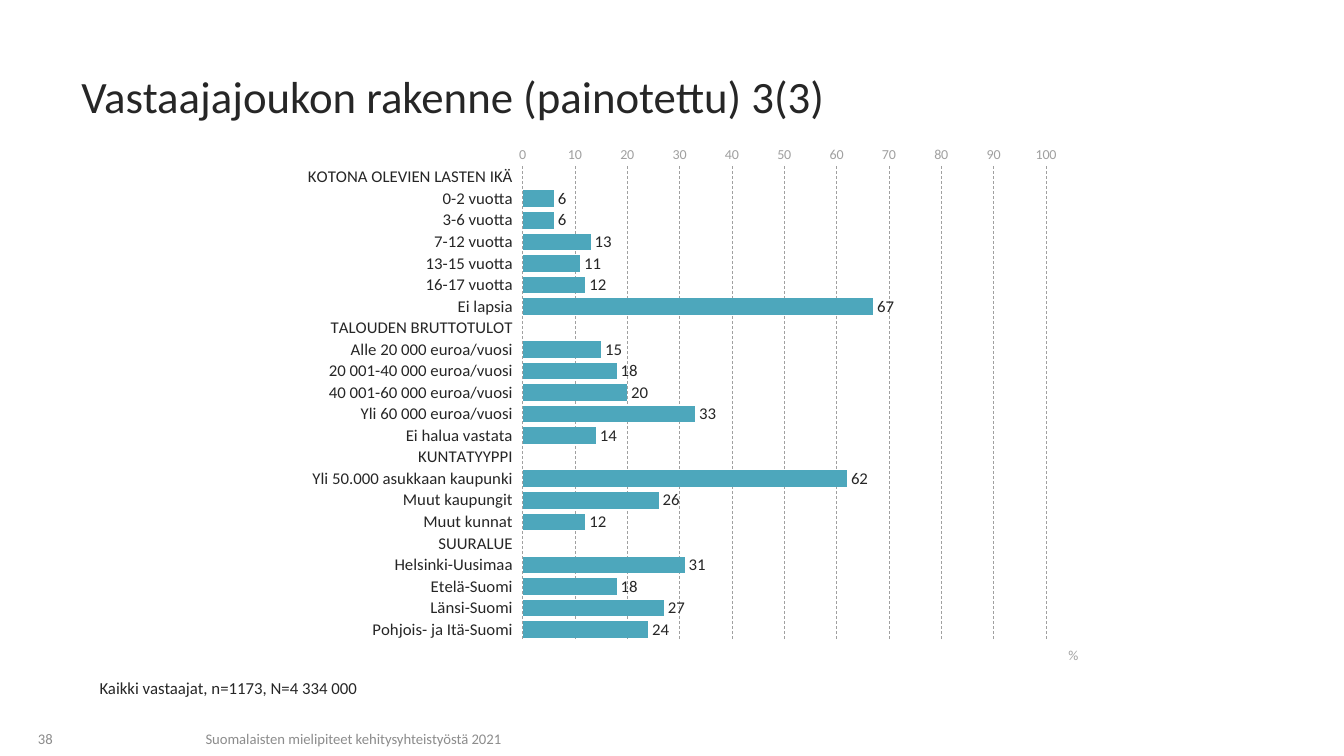
from lxml.etree import SubElement
from pptx import Presentation
from pptx.chart.data import CategoryChartData
from pptx.dml.color import RGBColor
from pptx.enum.chart import (XL_AXIS_CROSSES, XL_CHART_TYPE, XL_LABEL_POSITION,
                             XL_TICK_LABEL_POSITION, XL_TICK_MARK)
from pptx.enum.dml import MSO_LINE
from pptx.enum.text import MSO_ANCHOR, PP_ALIGN
from pptx.oxml.ns import qn
from pptx.util import Cm, Pt

FONT = "Calibri"
COLORS = {"text": "262626", "footer": "8C8C8C", "axis": "A0A0A0", "bar": "4DA7BC"}

RESPONDENTS = {
    "KOTONA OLEVIEN LASTEN IKÄ": {
        "0-2 vuotta": 6, "3-6 vuotta": 6, "7-12 vuotta": 13,
        "13-15 vuotta": 11, "16-17 vuotta": 12, "Ei lapsia": 67},
    "TALOUDEN BRUTTOTULOT": {
        "Alle 20 000 euroa/vuosi": 15, "20 001-40 000 euroa/vuosi": 18,
        "40 001-60 000 euroa/vuosi": 20, "Yli 60 000 euroa/vuosi": 33,
        "Ei halua vastata": 14},
    "KUNTATYYPPI": {
        "Yli 50.000 asukkaan kaupunki": 62, "Muut kaupungit": 26, "Muut kunnat": 12},
    "SUURALUE": {
        "Helsinki-Uusimaa": 31, "Etelä-Suomi": 18, "Länsi-Suomi": 27,
        "Pohjois- ja Itä-Suomi": 24},
}


def rgb(name):
    return RGBColor.from_string(COLORS[name])


def set_font(font, size, color):
    font.name = FONT
    font.size = Pt(size)
    font.bold = False
    font.color.rgb = rgb(color)


def add_text(slide, text, left, top, width, height, size=12, color="text",
             align=PP_ALIGN.LEFT, anchor=MSO_ANCHOR.TOP, line_spacing=1.0):
    box = slide.shapes.add_textbox(Cm(left), Cm(top), Cm(width), Cm(height))
    frame = box.text_frame
    frame.word_wrap = True
    frame.vertical_anchor = anchor
    paragraph = frame.paragraphs[0]
    paragraph.alignment = align
    paragraph.line_spacing = line_spacing
    run = paragraph.add_run()
    run.text = text
    set_font(run.font, size, color)


def set_layout(parent, index, target=None, **fractions):
    """Place a chart part by fractions of the chart's width and height."""
    for old_layout in parent.findall(qn("c:layout")):
        parent.remove(old_layout)
    layout = SubElement(parent, qn("c:layout"))
    parent.insert(index, layout)
    manual = SubElement(layout, qn("c:manualLayout"))
    if target:
        SubElement(manual, qn("c:layoutTarget"), val=target)
    for mode in ("xMode", "yMode"):
        SubElement(manual, qn(f"c:{mode}"), val="edge")
    for name, fraction in fractions.items():
        SubElement(manual, qn(f"c:{name}"), val=str(fraction))


def hide_axis_line(axis):
    axis.major_tick_mark = XL_TICK_MARK.NONE
    axis.minor_tick_mark = XL_TICK_MARK.NONE
    axis.format.line.fill.background()


def format_category_axis(axis):
    hide_axis_line(axis)
    axis.reverse_order = True
    axis.crosses = XL_AXIS_CROSSES.MAXIMUM
    axis.tick_label_position = XL_TICK_LABEL_POSITION.LOW
    set_font(axis.tick_labels.font, 12, "text")


def format_value_axis(axis):
    hide_axis_line(axis)
    axis.minimum_scale, axis.maximum_scale, axis.major_unit = 0, 100, 10
    set_font(axis.tick_labels.font, 10, "axis")
    axis.has_major_gridlines = True
    gridline = axis.major_gridlines.format.line
    gridline.color.rgb = rgb("axis")
    gridline.width = Pt(0.5)
    gridline.dash_style = MSO_LINE.DASH
    frame = axis.axis_title.text_frame
    frame.text = "%"
    set_font(frame.paragraphs[0].runs[0].font, 10, "axis")
    title = axis.axis_title._element
    title.find(".//" + qn("a:bodyPr")).set("rot", "0")
    set_layout(title, 1, x=0.98, y=0.94)


def add_bar_chart(slide, groups, left, top, width, height):
    """Add horizontal bars, with each group name as a category without a bar."""
    data = CategoryChartData(number_format="#,##0")
    values = []
    for group, shares in groups.items():
        for label, value in [(group, None), *shares.items()]:
            data.add_category(label)
            values.append(value)
    data.add_series("Osuus", values)
    chart = slide.shapes.add_chart(XL_CHART_TYPE.BAR_CLUSTERED, Cm(left), Cm(top),
                                   Cm(width), Cm(height), data).chart
    chart.has_title = False
    chart.has_legend = False
    set_font(chart.font, 12, "text")
    format_category_axis(chart.category_axis)
    format_value_axis(chart.value_axis)

    plot = chart.plots[0]
    plot.gap_width = 30
    plot.vary_by_categories = False
    fill = plot.series[0].format.fill
    fill.solid()
    fill.fore_color.rgb = rgb("bar")
    labels = plot.series[0].data_labels
    labels.show_value = True
    labels.number_format = "#,##0"
    labels.number_format_is_linked = False
    labels.position = XL_LABEL_POSITION.OUTSIDE_END
    set_font(labels.font, 12, "text")
    plot_area = chart._chartSpace.find(".//" + qn("c:plotArea"))
    set_layout(plot_area, 0, "inner", x=0.353, y=0.012, w=0.604, h=0.92)


def main():
    presentation = Presentation()
    presentation.slide_width = Cm(33.87)
    presentation.slide_height = Cm(19.05)
    slide = presentation.slides.add_slide(presentation.slide_layouts[6])

    footer = {"size": 10.5, "color": "footer", "anchor": MSO_ANCHOR.BOTTOM}
    add_text(slide, "Suomalaisten mielipiteet kehitysyhteistyöstä 2021",
             4.93, 18.19, 15.04, 0.76, **footer)
    add_text(slide, "38", 0.08, 18.19, 1.5, 0.76, align=PP_ALIGN.RIGHT, **footer)
    add_text(slide, "Vastaajajoukon rakenne (painotettu) 3(3)", 1.8, 1.63, 30.66, 1.73,
             size=32, anchor=MSO_ANCHOR.MIDDLE, line_spacing=0.9)
    add_bar_chart(slide, RESPONDENTS, 5.46, 3.71, 21.84, 13.31)
    add_text(slide, "Kaikki vastaajat, n=1173, N=4 334 000", 2.26, 17.02, 9.04, 0.71,
             line_spacing=0.9)
    presentation.save("out.pptx")


if __name__ == "__main__":
    main()
